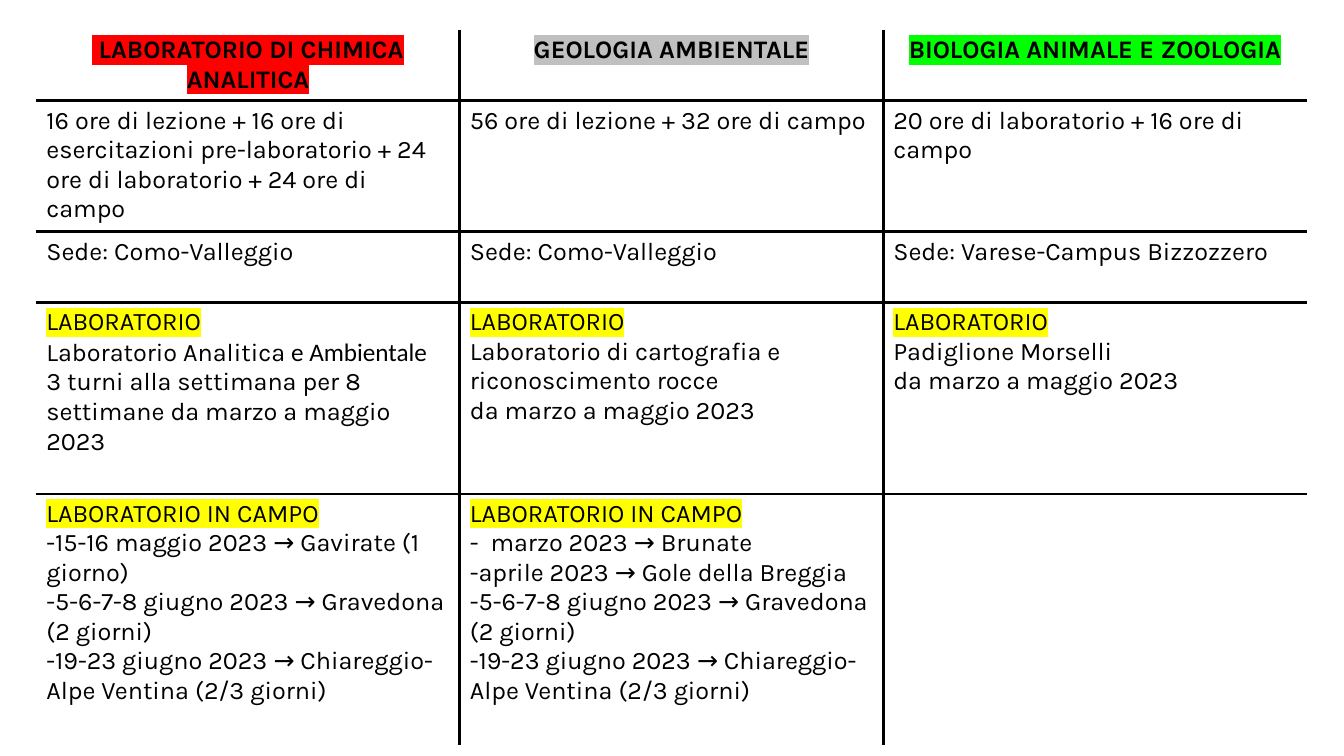
from dataclasses import dataclass
from typing import Optional

from lxml.etree import SubElement
from pptx import Presentation
from pptx.dml.color import RGBColor
from pptx.enum.text import PP_ALIGN
from pptx.oxml.ns import qn
from pptx.util import Inches, Pt

BLACK = RGBColor(0x00, 0x00, 0x00)
WHITE = RGBColor(0xFF, 0xFF, 0xFF)
RED = RGBColor(0xFF, 0x00, 0x00)
SILVER = RGBColor(0xC0, 0xC0, 0xC0)
GREEN = RGBColor(0x00, 0xFF, 0x00)
YELLOW = RGBColor(0xFF, 0xFF, 0x00)


@dataclass
class Span:
    text: str
    highlight: Optional[RGBColor] = None
    font: str = "Karla"
    bold: bool = False
    breaks: bool = False


@dataclass
class Line:
    spans: list
    centered: bool = False
    dashed: bool = False


def heading(text, color):
    return [Line([Span(text, color, bold=True)], centered=True)]


def label(text):
    return Line([Span(text, YELLOW)])


def plain(*texts):
    return [Line([Span(text)]) for text in texts]


def dashes(*texts):
    return [Line([Span(text)], dashed=True) for text in texts]


class CourseSlide:
    size = Pt(18)
    inner_border = (BLACK, Pt(2.25))
    outer_border = (WHITE, Pt(1))

    def __init__(self, deck):
        self.slide = deck.slides.add_slide(deck.slide_layouts[6])

    def table(self, rows, left, top, column_width, row_heights):
        columns = len(rows[0])
        table = self.slide.shapes.add_table(
            len(rows), columns, left, top, column_width * columns, sum(row_heights)
        ).table
        table.first_row = False
        table.horz_banding = False
        for column in table.columns:
            column.width = column_width
        for row, height in zip(table.rows, row_heights):
            row.height = height
        for r, row in enumerate(rows):
            for c, lines in enumerate(row):
                cell = table.cell(r, c)
                self.borders(cell, {
                    "a:lnL": c == 0,
                    "a:lnR": c == columns - 1,
                    "a:lnT": r == 0,
                    "a:lnB": r == len(rows) - 1,
                })
                cell.fill.background()
                self.lines(cell.text_frame, lines)

    def borders(self, cell, sides):
        properties = cell._tc.get_or_add_tcPr()
        for tag, is_outer in sides.items():
            color, width = self.outer_border if is_outer else self.inner_border
            border = SubElement(properties, qn(tag), w=str(width))
            fill = SubElement(border, qn("a:solidFill"))
            SubElement(fill, qn("a:srgbClr"), val=str(color))

    def lines(self, frame, lines):
        for index, line in enumerate(lines):
            paragraph = frame.add_paragraph() if index else frame.paragraphs[0]
            if line.dashed:
                properties = paragraph._p.get_or_add_pPr()
                properties.set("marL", "0")
                properties.set("indent", "0")
                SubElement(properties, qn("a:buFont"), typeface="Karla")
                SubElement(properties, qn("a:buChar"), char="-")
            paragraph.alignment = PP_ALIGN.CENTER if line.centered else PP_ALIGN.LEFT
            for span in line.spans:
                self.span(paragraph, span)

    def span(self, paragraph, span):
        run = paragraph.add_run()
        run.text = span.text
        run.font.size = self.size
        run.font.bold = span.bold
        run.font.color.rgb = BLACK
        if span.highlight is not None:
            highlight = SubElement(run._r.get_or_add_rPr(), qn("a:highlight"))
            SubElement(highlight, qn("a:srgbClr"), val=str(span.highlight))
        run.font.name = span.font
        if span.breaks:
            paragraph.add_line_break()


def main():
    deck = Presentation()
    deck.slide_width = Inches(13.33)
    deck.slide_height = Inches(7.5)

    shared_trips = dashes(
        "5-6-7-8 giugno 2023 → Gravedona (2 giorni)",
        "19-23 giugno 2023 → Chiareggio-Alpe Ventina (2/3 giorni)",
    )
    period = "da marzo a maggio 2023"
    lab = label("LABORATORIO")
    field_lab = label("LABORATORIO IN CAMPO")
    analytical_lab = Line([
        Span("Laboratorio Analitica"),
        Span(" e Ambientale", font="Calibri", breaks=True),
        Span(f"3 turni alla settimana per 8 settimane {period}"),
    ])

    titles = [
        heading(" LABORATORIO DI CHIMICA ANALITICA", RED),
        heading("GEOLOGIA AMBIENTALE", SILVER),
        heading("BIOLOGIA ANIMALE E ZOOLOGIA", GREEN),
    ]
    hours = [
        plain("16 ore di lezione + 16 ore di esercitazioni pre-laboratorio"
              " + 24 ore di laboratorio + 24 ore di campo"),
        plain("56 ore di lezione + 32 ore di campo"),
        plain("20 ore di laboratorio + 16 ore di campo"),
    ]
    venues = [
        plain("Sede: Como-Valleggio"),
        plain("Sede: Como-Valleggio"),
        plain("Sede: Varese-Campus Bizzozzero"),
    ]
    labs = [
        [lab, analytical_lab],
        [lab, *plain("Laboratorio di cartografia e riconoscimento rocce", period)],
        [lab, *plain("Padiglione Morselli", period)],
    ]
    field_trips = [
        [field_lab, *dashes("15-16 maggio 2023 → Gavirate (1 giorno)"), *shared_trips],
        [field_lab, *plain("-  marzo 2023 → Brunate"),
         *dashes("aprile 2023 → Gole della Breggia"), *shared_trips],
        [],
    ]

    CourseSlide(deck).table(
        [titles, hours, venues, labs, field_trips],
        left=Inches(0.36),
        top=Inches(0.3),
        column_width=Inches(4.2),
        row_heights=[Inches(height) for height in (0.7, 1.3, 0.7, 1.9, 2.5)],
    )
    deck.save("out.pptx")


if __name__ == "__main__":
    main()
